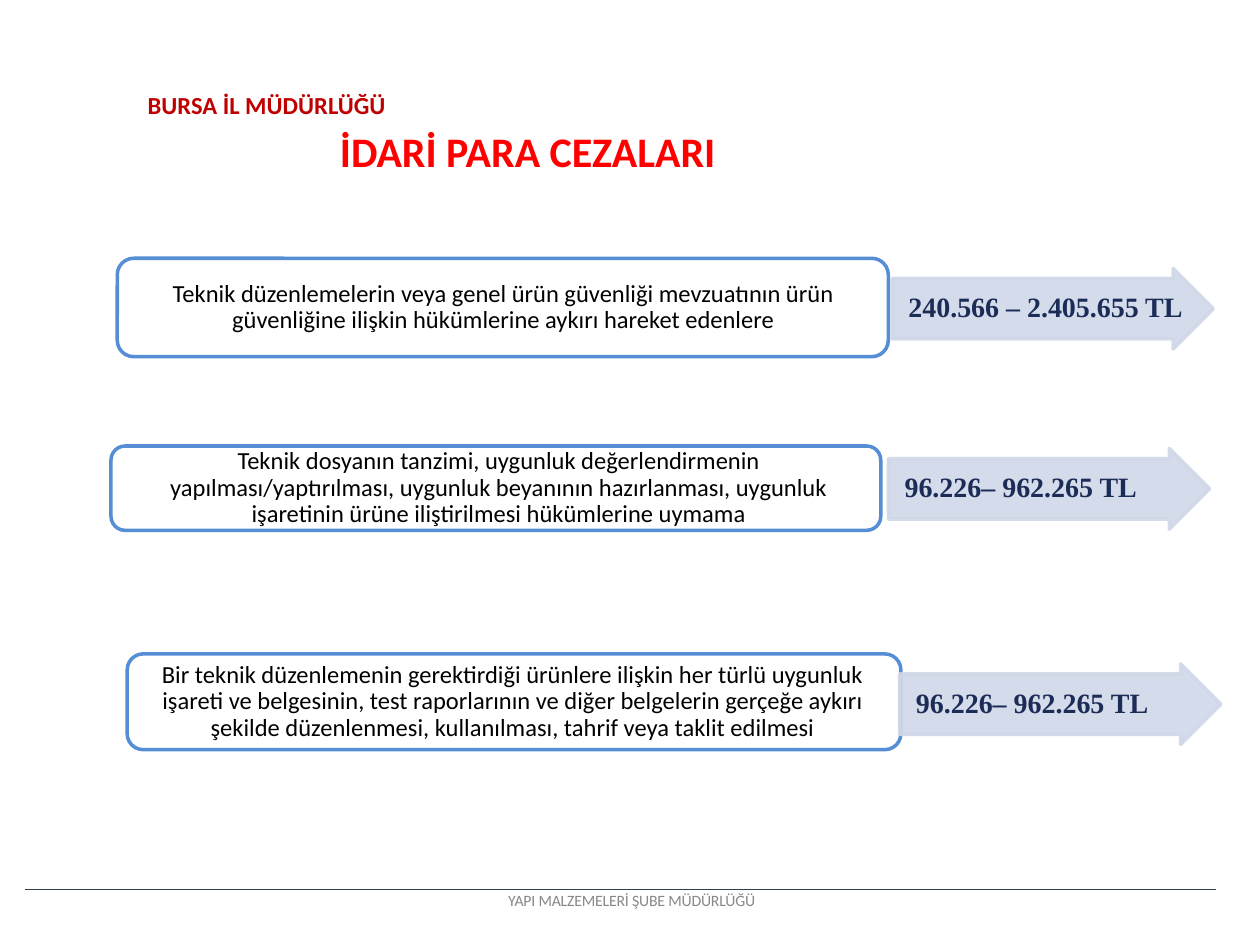
from lxml import etree
from pptx import Presentation
from pptx.dml.color import RGBColor
from pptx.enum.shapes import MSO_CONNECTOR, MSO_SHAPE
from pptx.enum.text import MSO_ANCHOR, PP_ALIGN
from pptx.oxml.ns import qn
from pptx.util import Pt

ROUNDED = MSO_SHAPE.ROUNDED_RECTANGLE
ARROW = MSO_SHAPE.RIGHT_ARROW
STRAIGHT = MSO_CONNECTOR.STRAIGHT
LEFT, CENTER = PP_ALIGN.LEFT, PP_ALIGN.CENTER
TOP, MIDDLE = MSO_ANCHOR.TOP, MSO_ANCHOR.MIDDLE


def color(hex_value):
    return RGBColor.from_string(hex_value)


def add_text(shapes, text, bounds, size, hex_value, bold=False, font="Calibri",
             align=LEFT, anchor=TOP, insets=(0, 0, 0, 0), spacing=None):
    box = shapes.add_textbox(*map(Pt, bounds))
    frame = box.text_frame
    frame.word_wrap = True
    frame.vertical_anchor = anchor
    (frame.margin_left, frame.margin_top,
     frame.margin_right, frame.margin_bottom) = map(Pt, insets)
    frame.text = text
    paragraph = frame.paragraphs[0]
    paragraph.alignment = align
    paragraph.line_spacing = spacing
    run = paragraph.runs[0]
    run.font.name = font
    run.font.size = Pt(size)
    run.font.bold = bold
    run.font.color.rgb = color(hex_value)
    return run


presentation = Presentation()
presentation.slide_width, presentation.slide_height = Pt(720), Pt(540)
slide = presentation.slides.add_slide(presentation.slide_layouts[6])

# Footer rule
footer_rule = slide.shapes.add_connector(STRAIGHT, Pt(14.4), Pt(508.3), Pt(694.8), Pt(508.3))
footer_rule.line.color.rgb = color("333E50")
footer_rule.line.width = Pt(0.48)
etree.SubElement(footer_rule._element.spPr, qn("a:effectLst"))

# Heading
add_text(slide.shapes, "İDARİ PARA CEZALARI", (156.2, 72, 414, 28.8), 24, "FF0000",
         bold=True, insets=(38, 0, 0, 0))

# Offences and their fines: box bounds, text left and width, arrow position
penalties = [
    ("Teknik düzenlemelerin veya genel ürün güvenliği mevzuatının ürün "
     "güvenliğine ilişkin hükümlerine aykırı hareket edenlere",
     (67, 147.6, 440.6, 56.2), (81.4, 412.6),
     "240.566 – 2.405.655 TL", (509.8, 153.4)),
    ("Teknik dosyanın tanzimi, uygunluk değerlendirmenin yapılması/yaptırılması, "
     "uygunluk beyanının hazırlanması, uygunluk işaretinin ürüne iliştirilmesi "
     "hükümlerine uymama",
     (63.4, 254.9, 439.9, 48.2), (72.7, 424.8),
     "96.226– 962.265 TL", (507.6, 256.3)),
    ("Bir teknik düzenlemenin gerektirdiği ürünlere ilişkin her türlü uygunluk "
     "işareti ve belgesinin, test raporlarının ve diğer belgelerin gerçeğe aykırı "
     "şekilde düzenlenmesi, kullanılması, tahrif veya taklit edilmesi",
     (72.7, 373.7, 442.1, 54.7), (76.3, 433.4),
     "96.226– 962.265 TL", (514.1, 379.4)),
]
for offence, box_bounds, (text_left, text_width), fine, (arrow_left, arrow_top) in penalties:
    offence_group = slide.shapes.add_group_shape().shapes
    offence_box = offence_group.add_shape(ROUNDED, *map(Pt, box_bounds))
    offence_box.shadow.inherit = False
    offence_box.fill.background()
    offence_box.line.color.rgb = color("558ED5")
    offence_box.line.width = Pt(2)
    text_bounds = (text_left, box_bounds[1] + 2.6, text_width, box_bounds[3] - 5)
    add_text(offence_group, offence, text_bounds, 14, "000000", align=CENTER,
             anchor=MIDDLE, insets=(7.2, 3.6, 7.2, 3.6), spacing=0.9)

    fine_group = slide.shapes.add_group_shape().shapes
    fine_arrow = fine_group.add_shape(ARROW, Pt(arrow_left), Pt(arrow_top), Pt(183.6), Pt(46.1))
    fine_arrow.adjustments[0] = 0.75
    fine_arrow.shadow.inherit = False
    fine_arrow.fill.solid()
    fine_arrow.fill.fore_color.rgb = color("D0D8E8")
    fine_arrow.line.color.rgb = color("D0D8E8")
    fine_arrow.line.width = Pt(2)
    # 90% opacity for the fill and the outline
    for shade in fine_arrow._element.spPr.iter(qn("a:srgbClr")):
        etree.SubElement(shade, qn("a:alpha"), val="90000")
    add_text(fine_group, fine, (arrow_left + 8.6, arrow_top + 5.6, 164.9, 34.6), 16, "1B2C57",
             bold=True, font="Times New Roman", anchor=MIDDLE,
             insets=(0.7, 0.7, 0.7, 0.7), spacing=0.9)

# Office name and footer
add_text(slide.shapes, "BURSA İL MÜDÜRLÜĞÜ", (83.5, 50.4, 241.2, 18), 14, "C00000",
         bold=True, insets=(0.9, 1.1, 0, 0))
footer = add_text(slide.shapes, "YAPI MALZEMELERİ ŞUBE MÜDÜRLÜĞÜ", (265, 510.5, 190.8, 10.1),
                  9, "888888", align=CENTER, insets=(0.9, 0, 0, 0), spacing=Pt(9.6))
footer.font._element.set("spc", "-10")

presentation.save("out.pptx")
